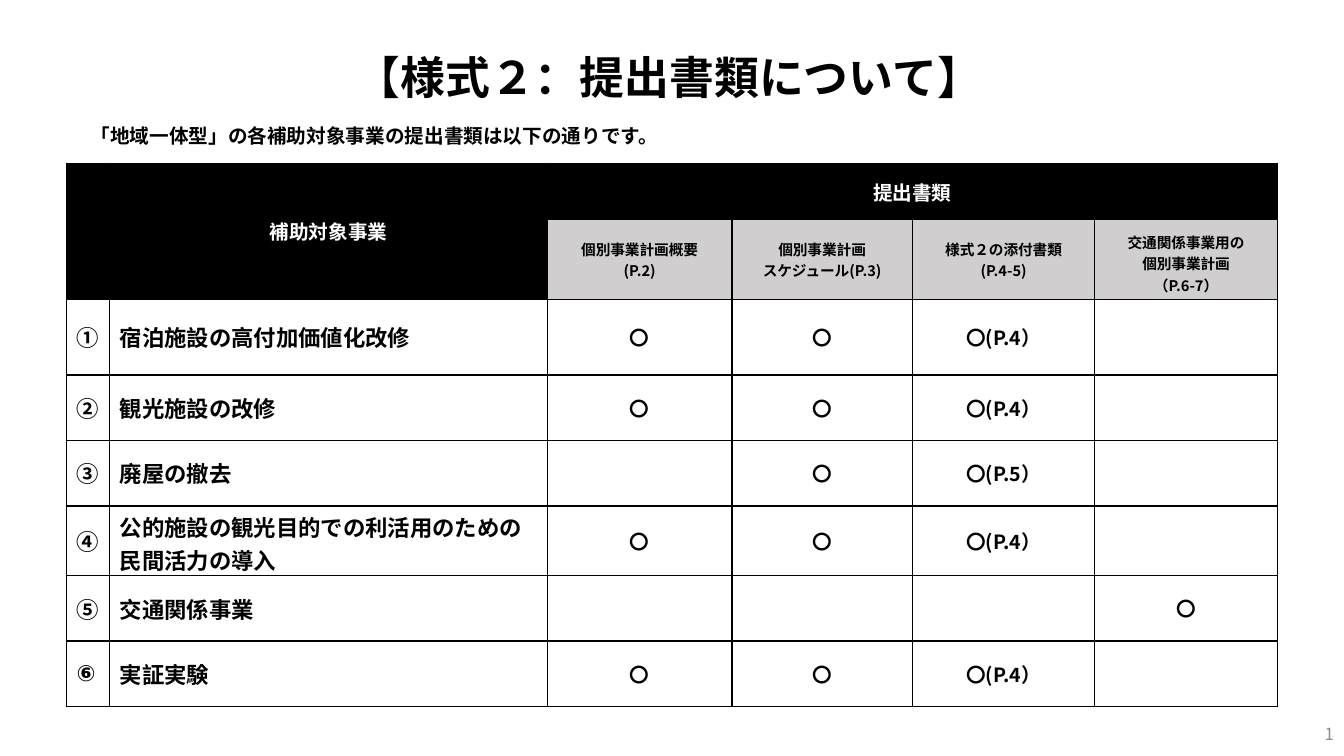
import pptx
import pptx.util
import pptx.dml.color
import pptx.enum.text
import pptx.oxml
import pptx.oxml.ns
from pptx.util import Inches

FONT = "Noto Sans CJK JP"
COLORS = {"black": "000000", "white": "FFFFFF", "gray": "D0CECE", "number": "8C8C8C"}
ALIGN = pptx.enum.text.PP_ALIGN
MIDDLE = pptx.enum.text.MSO_ANCHOR.MIDDLE

COLS = [0.43, 4.34, 1.83, 1.79, 1.81, 1.81]
ROWS = [0.56, 0.79, 0.75, 0.65, 0.65, 0.69, 0.65, 0.65]
DOCUMENTS = [
    "個別事業計画概要\n(P.2)",
    "個別事業計画\nスケジュール(P.3)",
    "様式２の添付書類\n(P.4-5)",
    "交通関係事業用の\n個別事業計画\n（P.6-7）",
]
PROJECTS = [
    ("①", "宿泊施設の高付加価値化改修", "〇", "〇", "〇(P.4）", ""),
    ("②", "観光施設の改修", "〇", "〇", "〇(P.4）", ""),
    ("③", "廃屋の撤去", "", "〇", "〇(P.5）", ""),
    ("④", "公的施設の観光目的での利活用のための\n民間活力の導入", "〇", "〇", "〇(P.4）", ""),
    ("⑤", "交通関係事業", "", "", "", "〇"),
    ("⑥", "実証実験", "〇", "〇", "〇(P.4）", ""),
]


def rgb(name):
    return pptx.dml.color.RGBColor.from_string(COLORS[name])


def write(tf, text, size, color="black", bold=True, align=ALIGN.LEFT, font=FONT):
    tf.text = text
    tf.word_wrap = True
    for p in tf.paragraphs:
        p.alignment = align
        for r in p.runs:
            r.font.size = pptx.util.Pt(size)
            r.font.bold = bold
            r.font.name = font
            r.font.color.rgb = rgb(color)
            ea = pptx.oxml.parse_xml(f'<a:ea {pptx.oxml.ns.nsdecls("a")} typeface="{font}"/>')
            r.font._element.find(pptx.oxml.ns.qn("a:latin")).addnext(ea)


def add_borders(cell):
    tcPr = cell._tc.get_or_add_tcPr()
    for i, side in enumerate(("lnL", "lnR", "lnT", "lnB")):
        tcPr.insert(i, pptx.oxml.parse_xml(
            f'<a:{side} {pptx.oxml.ns.nsdecls("a")} w="12700"><a:solidFill>'
            f'<a:srgbClr val="{COLORS["black"]}"/></a:solidFill></a:{side}>'))


def add_title(s, x, y, w, h):
    sp = s.shapes.title
    sp.left, sp.top, sp.width, sp.height = map(Inches, (x, y, w, h))
    tf = sp.text_frame
    write(tf, "【様式２：提出書類について】", 32, align=ALIGN.CENTER)
    tf.auto_size = pptx.enum.text.MSO_AUTO_SIZE.NONE
    tf.vertical_anchor = MIDDLE


def add_text(s, x, y, w, h, text, size, **style):
    sp = s.shapes.add_textbox(*map(Inches, (x, y, w, h)))
    write(sp.text_frame, text, size, **style)
    sp.text_frame.vertical_anchor = MIDDLE


def fill_header(table):
    for col in (0, 1):
        table.cell(0, col).merge(table.cell(1, col))
    table.cell(0, 2).merge(table.cell(0, 5))
    for col, text in ((1, "補助対象事業"), (2, "提出書類")):
        write(table.cell(0, col).text_frame, text, 14, "white", align=ALIGN.CENTER)
    for col, text in enumerate(DOCUMENTS, 2):
        write(table.cell(1, col).text_frame, text, 10.5, align=ALIGN.CENTER)


def fill_projects(table):
    for row, project in enumerate(PROJECTS, 2):
        for col, text in enumerate(project):
            if text:
                size, align = (16, ALIGN.LEFT) if col < 2 else (14, ALIGN.CENTER)
                font = "Arial" if text == "⑥" else FONT
                write(table.cell(row, col).text_frame, text, size, align=align, font=font)


def add_documents_table(s, x, y, w, h):
    table = s.shapes.add_table(len(ROWS), len(COLS), *map(Inches, (x, y, w, h))).table
    table.first_row = table.horz_banding = False
    for column, width in zip(table.columns, COLS):
        column.width = Inches(width)
    for row, height in zip(table.rows, ROWS):
        row.height = Inches(height)
    fill_header(table)
    fill_projects(table)
    for row in range(len(ROWS)):
        for col in range(len(COLS)):
            cell = table.cell(row, col)
            header = row == 0 or (row == 1 and col < 2)
            cell.fill.solid()
            cell.fill.fore_color.rgb = rgb("black" if header else "gray" if row == 1 else "white")
            cell.vertical_anchor = MIDDLE
            if row > 0 and col > 1 and cell.text_frame.text:
                cell.margin_top = cell.margin_bottom = Inches(0.12)
            add_borders(cell)


def main():
    prs = pptx.Presentation()
    prs.slide_width, prs.slide_height = Inches(13.33), Inches(7.5)
    s = prs.slides.add_slide(prs.slide_layouts[5])
    add_title(s, 0.17, 0.44, 12.93, 0.64)
    add_text(s, 0.8, 1.18, 6.67, 0.34,
             "「地域一体型」の各補助対象事業の提出書類は以下の通りです。", 14)
    add_documents_table(s, 0.66, 1.62, sum(COLS), sum(ROWS))
    add_text(s, 10.33, 7.08, 3, 0.4, "1", 12, color="number", bold=False, align=ALIGN.RIGHT)
    prs.save("out.pptx")


if __name__ == "__main__":
    main()
